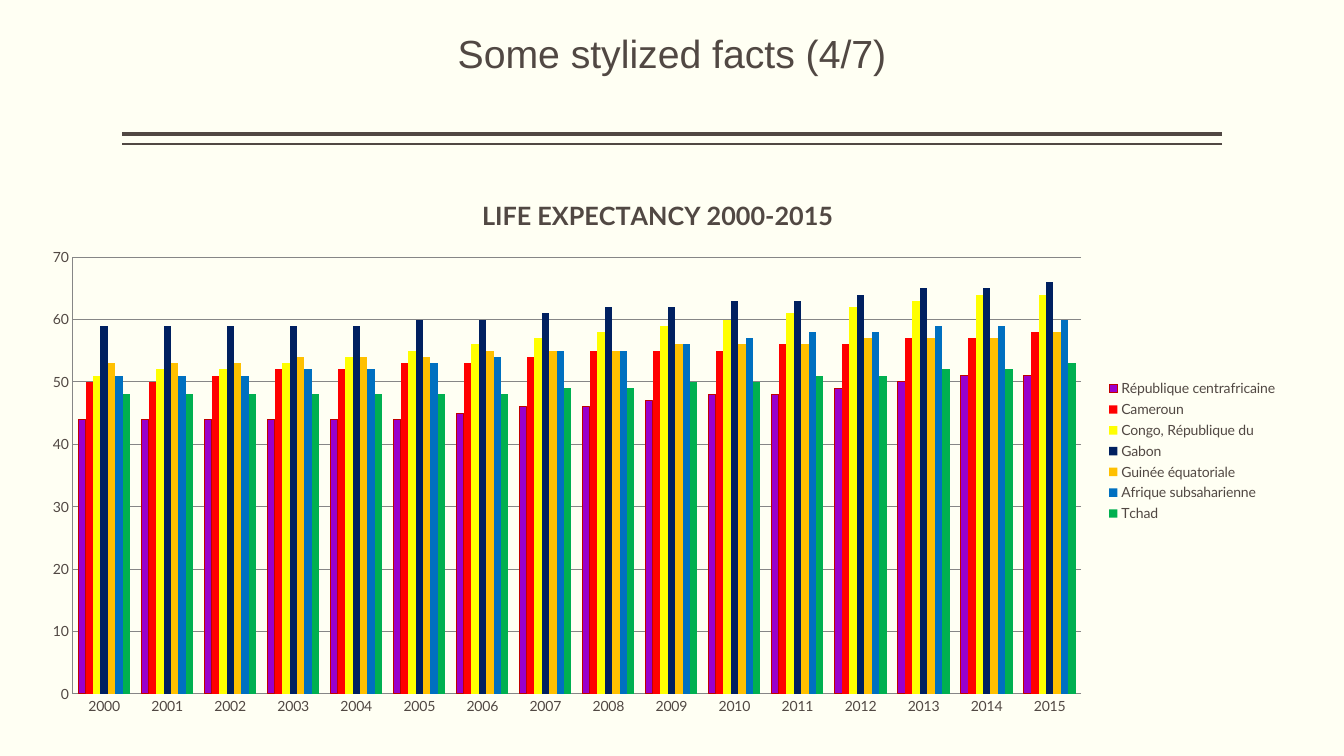
from dataclasses import dataclass

from lxml import etree
from pptx import Presentation
from pptx.chart.data import CategoryChartData
from pptx.dml.color import RGBColor
from pptx.enum import chart as ch, shapes, text
from pptx.oxml import ns
from pptx.util import Pt


@dataclass(frozen=True)
class Theme:
    """Colours, fonts and type sizes of the slide."""
    background: str = "FFFFF3"
    ink: str = "514843"
    grid: str = "868686"
    accent_line: str = "C00000"
    title_font: str = "Arial"
    chart_font: str = "Lato"
    title_size: int = 28
    chart_title_size: int = 18
    label_size: int = 10


THEME = Theme()
YEARS = range(2000, 2016)
LIFE_EXPECTANCY = [
    ("République centrafricaine", "9900CC",
     [44, 44, 44, 44, 44, 44, 45, 46, 46, 47, 48, 48, 49, 50, 51, 51]),
    ("Cameroun", "FF0000",
     [50, 50, 51, 52, 52, 53, 53, 54, 55, 55, 55, 56, 56, 57, 57, 58]),
    ("Congo, République du", "FFFF00",
     [51, 52, 52, 53, 54, 55, 56, 57, 58, 59, 60, 61, 62, 63, 64, 64]),
    ("Gabon", "002060",
     [59, 59, 59, 59, 59, 60, 60, 61, 62, 62, 63, 63, 64, 65, 65, 66]),
    ("Guinée équatoriale", "FFC000",
     [53, 53, 53, 54, 54, 54, 55, 55, 55, 56, 56, 56, 57, 57, 57, 58]),
    ("Afrique subsaharienne", "0070C0",
     [51, 51, 51, 52, 52, 53, 54, 55, 55, 56, 57, 58, 58, 59, 59, 60]),
    ("Tchad", "00B050",
     [48, 48, 48, 48, 48, 48, 48, 49, 49, 50, 50, 51, 51, 52, 52, 53]),
]


def rgb(value):
    """Turn a hex string into a colour."""
    return RGBColor.from_string(value)


def style_font(font, name, size, bold=False):
    """Apply a typeface and size in the ink colour."""
    font.name, font.size, font.bold = name, Pt(size), bold
    font.color.rgb = rgb(THEME.ink)


def style_line(line, color, width):
    """Set the colour and width of a line."""
    line.color.rgb = rgb(color)
    line.width = Pt(width)


def set_title(s, content):
    """Place and format the title placeholder."""
    sp = s.shapes.title
    sp.left, sp.top, sp.width, sp.height = Pt(87), Pt(6), Pt(786), Pt(86)
    tf = sp.text_frame
    tf.text = content
    tf.auto_size = text.MSO_AUTO_SIZE.NONE
    tf.vertical_anchor = text.MSO_ANCHOR.BOTTOM
    tf.margin_left = tf.margin_right = 0
    tf.margin_bottom = Pt(37)
    p = tf.paragraphs[0]
    p.alignment = text.PP_ALIGN.CENTER
    p.line_spacing = 0.9
    style_font(p.font, THEME.title_font, THEME.title_size)


def add_rule(s, y, width):
    """Draw a horizontal rule below the title."""
    rule = s.shapes.add_connector(
        shapes.MSO_CONNECTOR.STRAIGHT, Pt(873), Pt(y), Pt(87), Pt(y))
    style_line(rule.line, THEME.ink, width)
    etree.SubElement(rule._element.spPr, ns.qn("a:effectLst"))


def set_plot_area(chart, **fractions):
    """Fix the inner plot area as fractions of the chart."""
    plot_area = chart._chartSpace.chart.plotArea
    for old in plot_area.findall(ns.qn("c:layout")):
        plot_area.remove(old)
    layout = etree.Element(ns.qn("c:layout"))
    manual = etree.SubElement(layout, ns.qn("c:manualLayout"))
    settings = {"layoutTarget": "inner", "xMode": "edge", "yMode": "edge", **fractions}
    for tag, value in settings.items():
        etree.SubElement(manual, ns.qn(f"c:{tag}")).set("val", str(value))
    plot_area.insert(0, layout)


def style_axes(chart):
    """Format both axes and the gridlines."""
    for axis in (chart.category_axis, chart.value_axis):
        axis.major_tick_mark = axis.minor_tick_mark = ch.XL_TICK_MARK.NONE
        style_line(axis.format.line, THEME.grid, 0.75)
    values = chart.value_axis
    values.minimum_scale, values.maximum_scale, values.major_unit = 0, 70, 10
    values.has_major_gridlines = True
    style_line(values.major_gridlines.format.line, THEME.grid, 0.75)


def add_column_chart(s, title):
    """Add the clustered columns with title and legend."""
    data = CategoryChartData(number_format="General")
    data.categories = [str(year) for year in YEARS]
    for name, _, values in LIFE_EXPECTANCY:
        data.add_series(name, values)
    chart = s.shapes.add_chart(
        ch.XL_CHART_TYPE.COLUMN_CLUSTERED,
        Pt(19.5), Pt(126), Pt(900.5), Pt(392.5), data).chart
    style_font(chart.font, THEME.chart_font, THEME.label_size)

    chart.has_title = True
    chart.chart_title.include_in_layout = False
    tf = chart.chart_title.text_frame
    tf.text = title
    style_font(tf.paragraphs[0].font, THEME.chart_font, THEME.chart_title_size, bold=True)

    chart.has_legend = True
    chart.legend.position = ch.XL_LEGEND_POSITION.RIGHT
    chart.legend.include_in_layout = False

    plot = chart.plots[0]
    plot.gap_width, plot.overlap, plot.vary_by_categories = 150, 0, False
    for series, (_, color, _) in zip(plot.series, LIFE_EXPECTANCY):
        series.invert_if_negative = False
        series.format.fill.solid()
        series.format.fill.fore_color.rgb = rgb(color)
    style_line(plot.series[0].format.line, THEME.accent_line, 0.75)
    style_axes(chart)
    set_plot_area(chart, x=0.036, y=0.147, w=0.8, h=0.795)


def main():
    """Build and save the slide."""
    prs = Presentation()
    prs.slide_width, prs.slide_height = Pt(960), Pt(540)
    s = prs.slides.add_slide(prs.slide_layouts[5])
    s.background.fill.solid()
    s.background.fill.fore_color.rgb = rgb(THEME.background)
    add_rule(s, y=96, width=3)
    add_rule(s, y=103, width=1)
    set_title(s, "Some stylized facts (4/7)")
    add_column_chart(s, "LIFE EXPECTANCY 2000-2015")
    prs.save("out.pptx")


if __name__ == "__main__":
    main()
